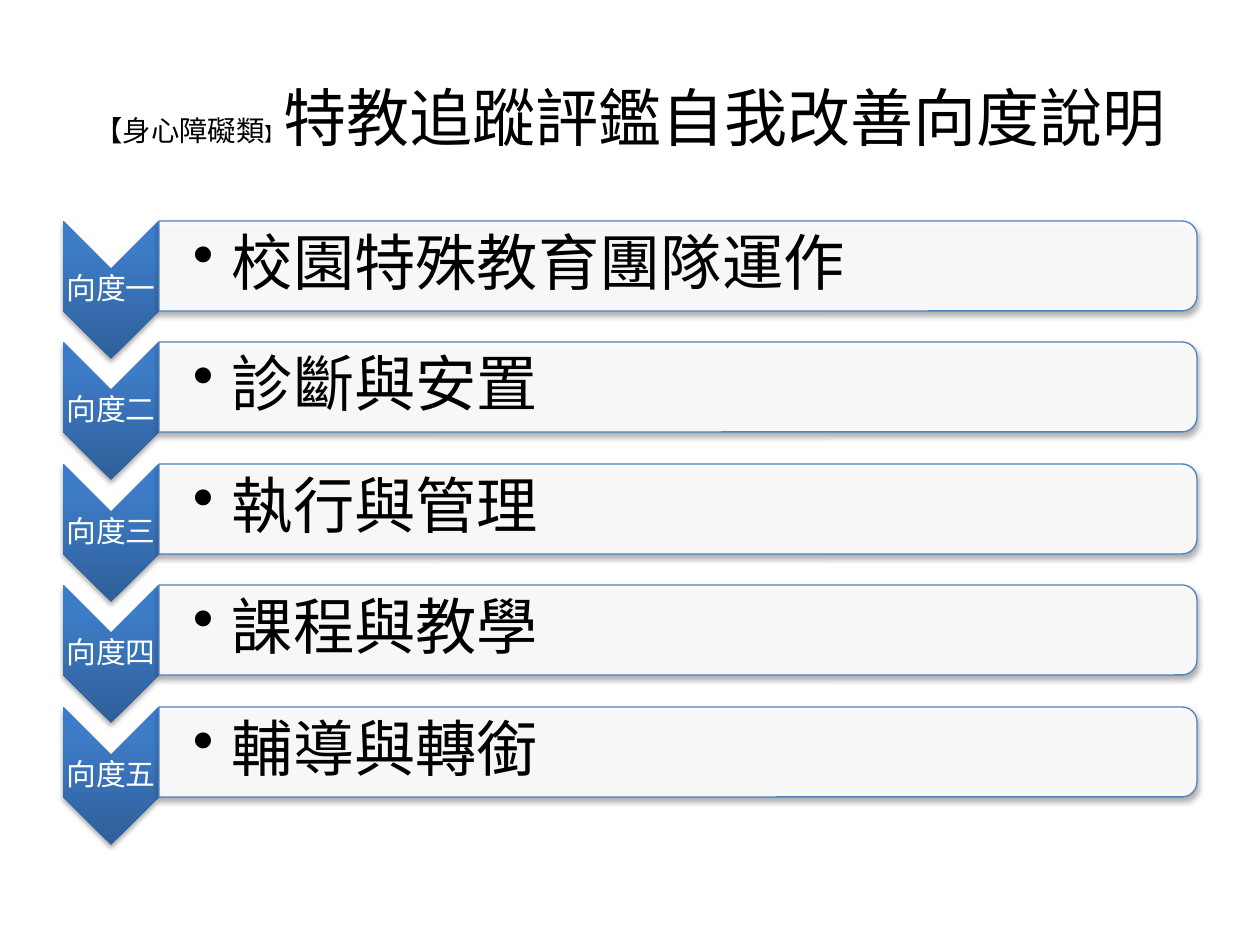
from dataclasses import dataclass

from lxml import etree
from pptx import Presentation
from pptx import util as u
from pptx.dml.color import RGBColor
from pptx.enum import shapes, text
from pptx.oxml.ns import qn
from pptx.shapes.autoshape import Shape
from pptx.slide import Slide

SCALE = 914400 / 126


@dataclass(frozen=True)
class Theme:
    font: str = "Noto Sans CJK SC"
    ink: str = "000000"
    paper: str = "FFFFFF"
    edge: str = "4F81BD"
    blend: tuple = ((0, "2F5F99"), (80, "3D7CC7"), (100, "3A7CCB"))
    tag: float = 16.2
    close: float = 10.8
    title: float = 36
    label: float = 17
    body: float = 35


@dataclass(frozen=True)
class Box:
    left: int
    top: int
    width: int
    height: int

    def place(self) -> list[int]:
        return [px(n) for n in (self.left, self.top, self.width, self.height)]

    def turned(self) -> "Box":
        shift = (self.width - self.height) // 2
        return Box(self.left + shift, self.top - shift, self.height, self.width)


@dataclass(frozen=True)
class Row:
    label: str
    body: str


THEME = Theme()
ROWS = [
    Row("向度一", "校園特殊教育團隊運作"),
    Row("向度二", "診斷與安置"),
    Row("向度三", "執行與管理"),
    Row("向度四", "課程與教學"),
    Row("向度五", "輔導與轉銜"),
]
TOP, SPAN = 221, 486


def px(count: int) -> int:
    return round(count * SCALE)


def add(parent, tag: str, **attrs):
    return etree.SubElement(parent, qn(tag), {k: str(v) for k, v in attrs.items()})


def style(font, size: float, color: str) -> None:
    font.size = u.Pt(size)
    font.name = THEME.font
    font.color.rgb = RGBColor.from_string(color)
    add(font._element, "a:ea", typeface=THEME.font)


def shade(shape: Shape) -> None:
    shape.shadow.inherit = False
    effect = shape.element.spPr.find(qn("a:effectLst"))
    outer = add(effect, "a:outerShdw", blurRad=u.Pt(3.1), dist=u.Pt(1.8),
                dir=90 * 60000, rotWithShape=0)
    color = add(outer, "a:srgbClr", val=THEME.ink)
    add(color, "a:alpha", val=35000)


def draw_shape(slide: Slide, kind: shapes.MSO_SHAPE, box: Box) -> Shape:
    shape = slide.shapes.add_shape(kind, *box.turned().place())
    shape.rotation = 90
    shade(shape)
    return shape


def draw_arrow(slide: Slide, box: Box) -> None:
    arrow = draw_shape(slide, shapes.MSO_SHAPE.CHEVRON, box)
    arrow.line.fill.background()
    arrow.fill.gradient()
    grad = arrow.element.spPr.find(qn("a:gradFill"))
    grad.set("rotWithShape", "0")
    grad.find(qn("a:lin")).set("ang", str(270 * 60000))
    stops = grad.find(qn("a:gsLst"))
    for stop in list(stops):
        stops.remove(stop)
    for spot, color in THEME.blend:
        add(add(stops, "a:gs", pos=spot * 1000), "a:srgbClr", val=color)


def draw_bar(slide: Slide, box: Box) -> None:
    bar = draw_shape(slide, shapes.MSO_SHAPE.ROUND_2_SAME_RECTANGLE, box)
    bar.fill.solid()
    bar.fill.fore_color.rgb = RGBColor.from_string(THEME.paper)
    color = bar.element.spPr.find(qn("a:solidFill")).find(qn("a:srgbClr"))
    add(color, "a:alpha", val=90000)
    bar.line.color.rgb = RGBColor.from_string(THEME.edge)
    bar.line.width = u.Pt(0.75)


def draw_text(slide: Slide, box: Box, words: str, size: float, color: str,
              inset: int, pad: int, bullet: bool = False) -> None:
    frame = slide.shapes.add_textbox(*box.place()).text_frame
    frame.word_wrap = True
    frame.vertical_anchor = text.MSO_ANCHOR.MIDDLE
    frame.margin_left = px(inset)
    frame.margin_top = frame.margin_right = frame.margin_bottom = px(pad)
    para = frame.paragraphs[0]
    para.text = words
    para.line_spacing = 0.9
    if bullet:
        para.level = 1
        props = para._p.get_or_add_pPr()
        props.set("marL", str(px(39)))
        props.set("indent", str(px(-39)))
        add(props, "a:buChar", char="•")
    else:
        para.alignment = text.PP_ALIGN.CENTER
    style(para.font, size, color)


def draw_title(slide: Slide) -> None:
    title = slide.shapes.title
    title.left, title.top, title.width, title.height = Box(63, 38, 1134, 157).place()
    frame = title.text_frame
    frame.auto_size = text.MSO_AUTO_SIZE.NONE
    frame.vertical_anchor = text.MSO_ANCHOR.MIDDLE
    para = frame.paragraphs[0]
    para.alignment = text.PP_ALIGN.CENTER
    for words, size in (
        ("【身心障礙類", THEME.tag),
        ("】", THEME.close),
        ("特教追蹤評鑑自我改善向度說明", THEME.title),
    ):
        run = para.add_run()
        run.text = words
        style(run.font, size, THEME.ink)


def draw_row(slide: Slide, row: Row, top: int) -> None:
    draw_arrow(slide, Box(63, top, 96, 138))
    draw_text(slide, Box(63, top + 48, 96, 42), row.label,
              THEME.label, THEME.paper, 1, 1)
    draw_bar(slide, Box(159, top, 1038, 90))
    draw_text(slide, Box(159, top + 4, 1033, 81), row.body,
              THEME.body, THEME.ink, 34, 3, bullet=True)


def main() -> None:
    deck = Presentation()
    deck.slide_width, deck.slide_height = px(1260), px(945)
    slide = deck.slides.add_slide(deck.slide_layouts[5])
    draw_title(slide)
    for i, row in enumerate(ROWS):
        draw_row(slide, row, TOP + SPAN * i // (len(ROWS) - 1))
    deck.save("out.pptx")


if __name__ == "__main__":
    main()
